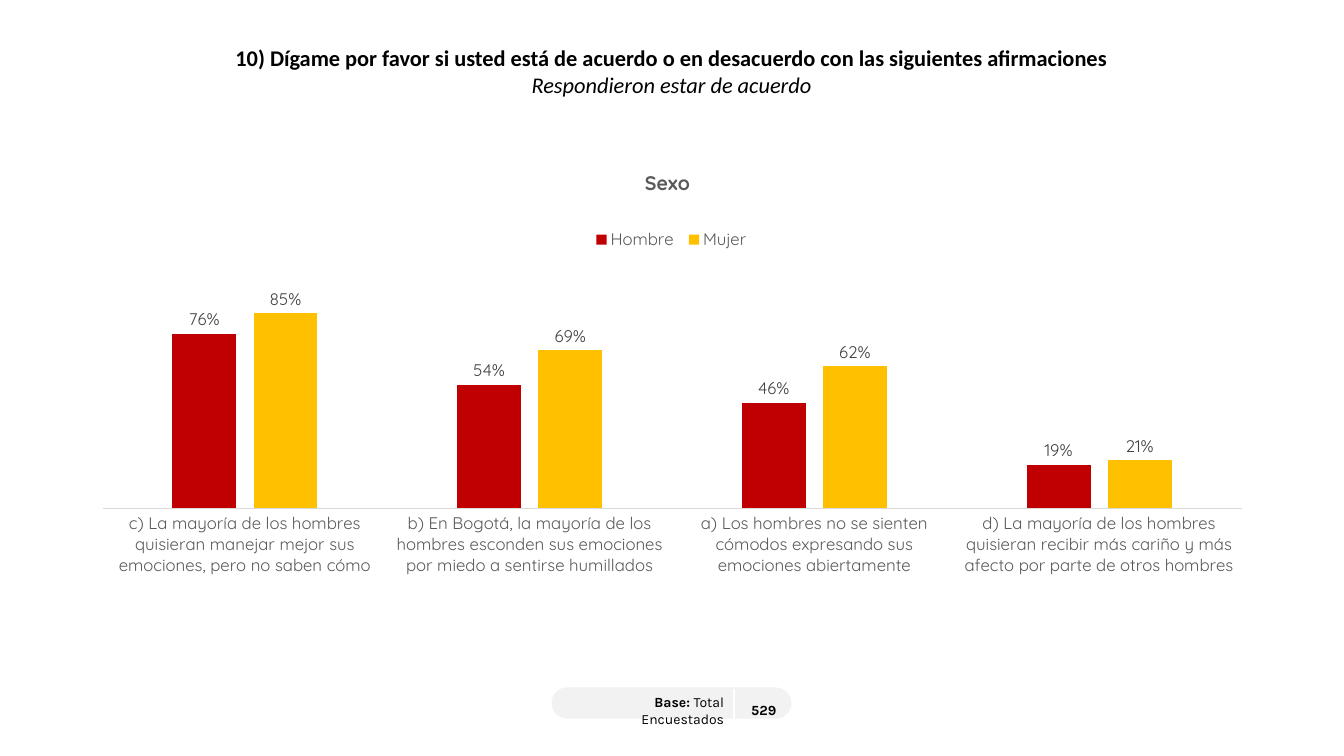
"""Build the survey slide on agreement by sex, with a column chart and its base."""
from lxml import etree
from pptx import Presentation
from pptx import util as u
from pptx.chart.data import CategoryChartData
from pptx.dml.color import RGBColor
from pptx.enum import chart as ch, shapes, text
from pptx.oxml.ns import qn

QUESTION = "10) Dígame por favor si usted está de acuerdo o en desacuerdo con las siguientes afirmaciones"
ANSWER = "Respondieron estar de acuerdo"
STATEMENTS = [
    "c) La mayoría de los hombres quisieran manejar mejor sus emociones, pero no saben cómo",
    "b) En Bogotá, la mayoría de los hombres esconden sus emociones por miedo a sentirse humillados",
    "a) Los hombres no se sienten cómodos expresando sus emociones abiertamente",
    "d) La mayoría de los hombres quisieran recibir más cariño y más afecto por parte de otros hombres",
]
SERIES = [
    ("Hombre", [0.76, 0.54, 0.46, 0.19], "C00000"),
    ("Mujer", [0.85, 0.69, 0.62, 0.21], "FFC000"),
]
BASE = [
    (1.68, text.PP_ALIGN.RIGHT, [("Base: ", True), ("Total Encuestados", False)], "a:lnR"),
    (0.59, text.PP_ALIGN.CENTER, [("529", True)], "a:lnL"),
]


def color(value):
    return RGBColor.from_string(value)


def style(font, name, size, tint="000000", bold=False, italic=False):
    font.name, font.size, font.bold, font.italic = name, u.Pt(size), bold, italic
    font.color.rgb = color(tint)


def write(para, words, align=text.PP_ALIGN.CENTER, **format):
    para.alignment = align
    span = para.add_run()
    span.text = words
    style(span.font, **format)


def place(element, index, **layout):
    for old in element.findall(qn("c:layout")):
        element.remove(old)
    node = etree.Element(qn("c:layout"))
    manual = etree.SubElement(node, qn("c:manualLayout"))
    for tag, value in layout.items():
        etree.SubElement(manual, qn("c:" + tag)).set("val", str(value))
    element.insert(index, node)


def add_heading(page):
    box = page.shapes.add_textbox(u.Inches(1.25), u.Inches(0.39), u.Inches(10.82), u.Inches(0.64))
    frame = box.text_frame
    frame.word_wrap = True
    write(frame.paragraphs[0], QUESTION, name="Calibri", size=16, bold=True)
    write(frame.add_paragraph(), ANSWER, name="Calibri", size=16, italic=True)


def add_base(page):
    pill = page.shapes.add_shape(shapes.MSO_SHAPE.ROUNDED_RECTANGLE, u.Inches(5.47),
                                 u.Inches(6.82), u.Inches(2.38), u.Inches(0.31))
    pill.adjustments[0] = 0.5
    pill.shadow.inherit = False
    pill.fill.solid()
    pill.fill.fore_color.rgb = color("F2F2F2")
    pill.line.fill.background()

    table = page.shapes.add_table(1, len(BASE), u.Inches(5.6), u.Inches(6.84),
                                  u.Inches(2.27), u.Inches(0.16)).table
    table.first_row = table.horz_banding = False
    for index, (width, align, spans, side) in enumerate(BASE):
        table.columns[index].width = u.Inches(width)
        cell = table.cell(0, index)
        cell.vertical_anchor = text.MSO_ANCHOR.MIDDLE
        cell.fill.background()
        for words, bold in spans:
            write(cell.text_frame.paragraphs[0], words, align, name="Karla", size=10, bold=bold)
        properties = cell._tc.get_or_add_tcPr()
        for position, tag in enumerate(("a:lnL", "a:lnR", "a:lnT", "a:lnB")):
            border = etree.Element(qn(tag), w="12700")
            if tag == side:
                fill = etree.SubElement(border, qn("a:solidFill"))
                etree.SubElement(fill, qn("a:srgbClr"), val="FFFFFF")
            else:
                etree.SubElement(border, qn("a:noFill"))
            properties.insert(position, border)


def add_columns(page):
    data = CategoryChartData(number_format="0%")
    data.categories = STATEMENTS
    for name, values, _ in SERIES:
        data.add_series(name, values)
    chart = page.shapes.add_chart(ch.XL_CHART_TYPE.COLUMN_CLUSTERED, u.Inches(0.67),
                                  u.Inches(1.43), u.Inches(11.98), u.Inches(5.12), data).chart
    style(chart.font, "Quicksand", 12)

    write(chart.chart_title.text_frame.paragraphs[0], "Sexo",
          name="Quicksand", size=14, tint="595959", bold=True)
    chart.chart_title.include_in_layout = False
    place(chart.chart_title._element, 1, xMode="edge", yMode="edge", x=0.475, y=0.04)

    chart.has_legend = True
    chart.legend.position = ch.XL_LEGEND_POSITION.TOP
    chart.legend.include_in_layout = False
    style(chart.legend.font, "Quicksand", 12, "595959")
    place(chart.legend._element, 1, xMode="edge", yMode="edge", x=0.43, y=0.155, w=0.14, h=0.06)

    statements, shares = chart.category_axis, chart.value_axis
    statements.major_tick_mark = ch.XL_TICK_MARK.NONE
    style(statements.tick_labels.font, "Quicksand", 12, "595959")
    statements.format.line.color.rgb = color("D9D9D9")
    statements.format.line.width = u.Pt(0.75)
    shares.minimum_scale, shares.maximum_scale = 0, 0.9
    shares.has_major_gridlines = False
    shares.visible = False

    plot = chart.plots[0]
    plot.gap_width, plot.overlap, plot.vary_by_categories = 219, -27, False
    for series, (_, _, tint) in zip(plot.series, SERIES):
        series.format.fill.solid()
        series.format.fill.fore_color.rgb = color(tint)
        labels = series.data_labels
        labels.show_value = True
        labels.position = ch.XL_LABEL_POSITION.OUTSIDE_END
        labels.number_format, labels.number_format_is_linked = "0%", False
        style(labels.font, "Quicksand", 12, "404040")
    place(chart._chartSpace.chart.plotArea, 0, layoutTarget="inner", xMode="edge", yMode="edge",
          x=0.029, y=0.306, w=0.943, h=0.4)


def main():
    deck = Presentation()
    deck.slide_width, deck.slide_height = u.Inches(13.33), u.Inches(7.5)
    page = deck.slides.add_slide(deck.slide_layouts[6])
    add_heading(page)
    add_base(page)
    add_columns(page)
    deck.save("out.pptx")


if __name__ == "__main__":
    main()
